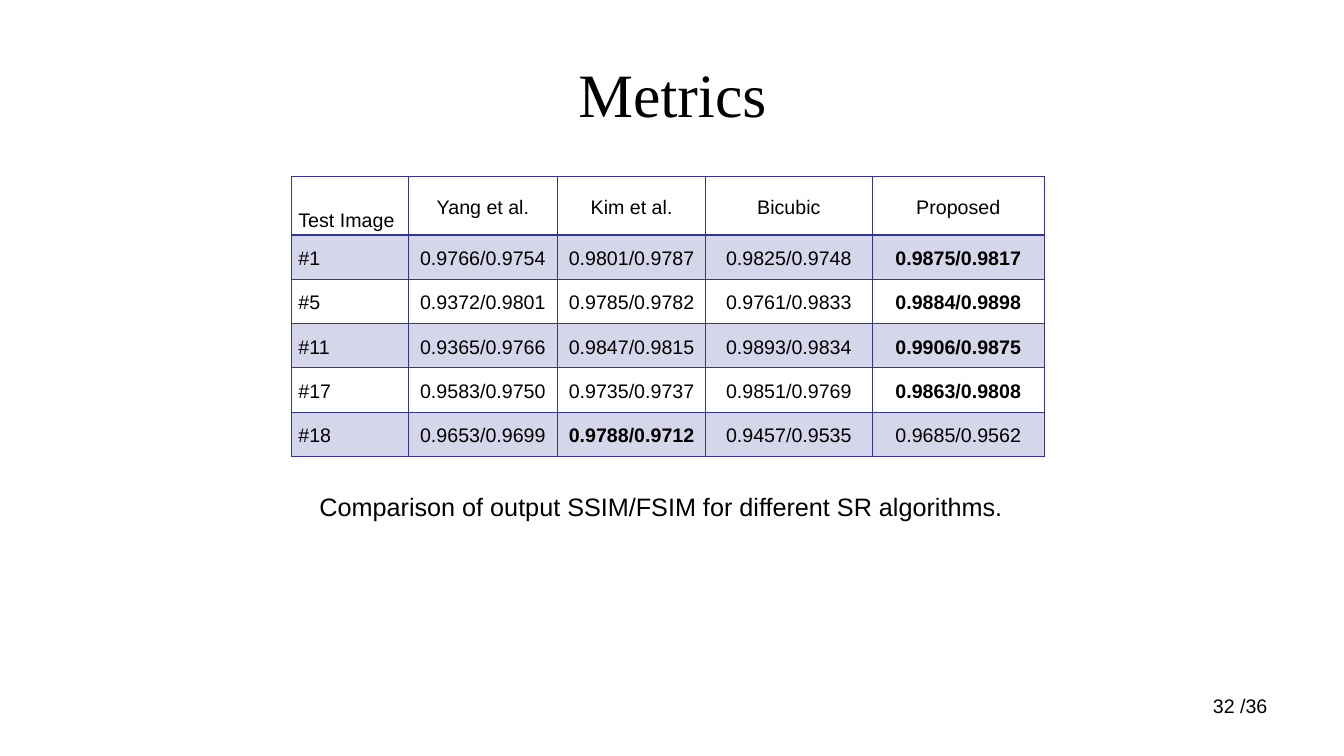
from dataclasses import dataclass

import lxml.etree
import pptx
import pptx.dml.color
import pptx.enum.text
import pptx.oxml.ns
import pptx.util

PX = 9144
BLACK = pptx.dml.color.RGBColor(0x00, 0x00, 0x00)
INDIGO = pptx.dml.color.RGBColor(0x33, 0x33, 0x99)
ALIGN = pptx.enum.text.PP_ALIGN
ANCHOR = pptx.enum.text.MSO_ANCHOR
AUTO = pptx.enum.text.MSO_AUTO_SIZE


@dataclass
class Box:
    text: str
    left: int
    top: int
    width: int
    height: int
    size: int
    font: str = "Arial"
    align: ALIGN = ALIGN.LEFT
    anchor: ANCHOR = ANCHOR.TOP
    wrap: bool = True


@dataclass
class Result:
    image: str
    scores: tuple[str, ...]
    best: int


BOXES = [
    Box("Metrics", 67, 30, 1200, 125, 44, "Times New Roman", ALIGN.CENTER, ANCHOR.MIDDLE),
    Box("Comparison of output SSIM/FSIM for different SR algorithms.",
        307, 483, 704, 40, 18, wrap=False),
    Box("32 /36", 956, 683, 311, 52, 14, align=ALIGN.RIGHT),
]

HEADERS = ("Test Image", "Yang et al.", "Kim et al.", "Bicubic", "Proposed")
RESULTS = [
    Result("#1", ("0.9766/0.9754", "0.9801/0.9787", "0.9825/0.9748", "0.9875/0.9817"), 4),
    Result("#5", ("0.9372/0.9801", "0.9785/0.9782", "0.9761/0.9833", "0.9884/0.9898"), 4),
    Result("#11", ("0.9365/0.9766", "0.9847/0.9815", "0.9893/0.9834", "0.9906/0.9875"), 4),
    Result("#17", ("0.9583/0.9750", "0.9735/0.9737", "0.9851/0.9769", "0.9863/0.9808"), 4),
    Result("#18", ("0.9653/0.9699", "0.9788/0.9712", "0.9457/0.9535", "0.9685/0.9562"), 2),
]
TABLE_LEFT, TABLE_TOP = 289, 175
COLUMN_WIDTHS = (116, 148, 147, 165, 171)
HEADER_HEIGHT, ROW_HEIGHT = 58, 44


def px(n: int) -> pptx.util.Emu:
    return pptx.util.Emu(n * PX)


def write(tf, text: str, *, size: int, font: str = "Arial", align=ALIGN.LEFT,
          bold: bool = False, spacing: float = 1.0) -> None:
    p = tf.paragraphs[0]
    p.alignment = align
    p.line_spacing = spacing
    r = p.add_run()
    r.text = text
    r.font.name = font
    r.font.size = pptx.util.Pt(size)
    r.font.bold = bold
    r.font.color.rgb = BLACK


def add_box(s, box: Box) -> None:
    sp = s.shapes.add_textbox(px(box.left), px(box.top), px(box.width), px(box.height))
    tf = sp.text_frame
    tf.word_wrap = box.wrap
    tf.auto_size = AUTO.NONE if box.wrap else AUTO.SHAPE_TO_FIT_TEXT
    tf.vertical_anchor = box.anchor
    write(tf, box.text, size=box.size, font=box.font, align=box.align)


def set_borders(cell, top: int, bottom: int) -> None:
    qn = pptx.oxml.ns.qn
    tc_pr = cell._tc.get_or_add_tcPr()
    sides = (("L", 1), ("R", 1), ("T", top), ("B", bottom))
    for i, (side, points) in enumerate(sides):
        ln = lxml.etree.Element(qn(f"a:ln{side}"), w=str(pptx.util.Pt(points)))
        fill = lxml.etree.SubElement(ln, qn("a:solidFill"))
        lxml.etree.SubElement(fill, qn("a:srgbClr"), val=str(INDIGO))
        tc_pr.insert(i, ln)


def set_fill(cell, shaded: bool) -> None:
    if not shaded:
        cell.fill.background()
        return
    cell.fill.solid()
    cell.fill.fore_color.rgb = INDIGO
    qn = pptx.oxml.ns.qn
    color = cell._tc.tcPr.find(f"{qn('a:solidFill')}/{qn('a:srgbClr')}")
    lxml.etree.SubElement(color, qn("a:alpha"), val="20000")


def add_results(s) -> None:
    rows = [HEADERS] + [(result.image, *result.scores) for result in RESULTS]
    heights = [HEADER_HEIGHT] + [ROW_HEIGHT] * len(RESULTS)
    table = s.shapes.add_table(
        len(rows), len(HEADERS), px(TABLE_LEFT), px(TABLE_TOP),
        px(sum(COLUMN_WIDTHS)), px(sum(heights))).table
    table.first_row = False
    table.horz_banding = False
    for column, width in zip(table.columns, COLUMN_WIDTHS):
        column.width = px(width)
    for i, texts in enumerate(rows):
        table.rows[i].height = px(heights[i])
        for j, text in enumerate(texts):
            cell = table.cell(i, j)
            corner = i == 0 and j == 0
            cell.margin_left = cell.margin_right = px(7)
            cell.margin_top = 0
            cell.margin_bottom = px(3 if corner else 0)
            cell.vertical_anchor = ANCHOR.BOTTOM if corner else ANCHOR.MIDDLE
            set_fill(cell, i % 2 == 1)
            set_borders(cell, top=2 if i == 1 else 1, bottom=2 if i == 0 else 1)
            write(cell.text_frame, text, size=14, spacing=1.15,
                  align=ALIGN.CENTER if j else ALIGN.LEFT,
                  bold=i > 0 and j == RESULTS[i - 1].best)


def main() -> None:
    prs = pptx.Presentation()
    prs.slide_width, prs.slide_height = px(1333), px(750)
    s = prs.slides.add_slide(prs.slide_layouts[6])
    add_results(s)
    for box in BOXES:
        add_box(s, box)
    prs.save("out.pptx")


if __name__ == "__main__":
    main()
